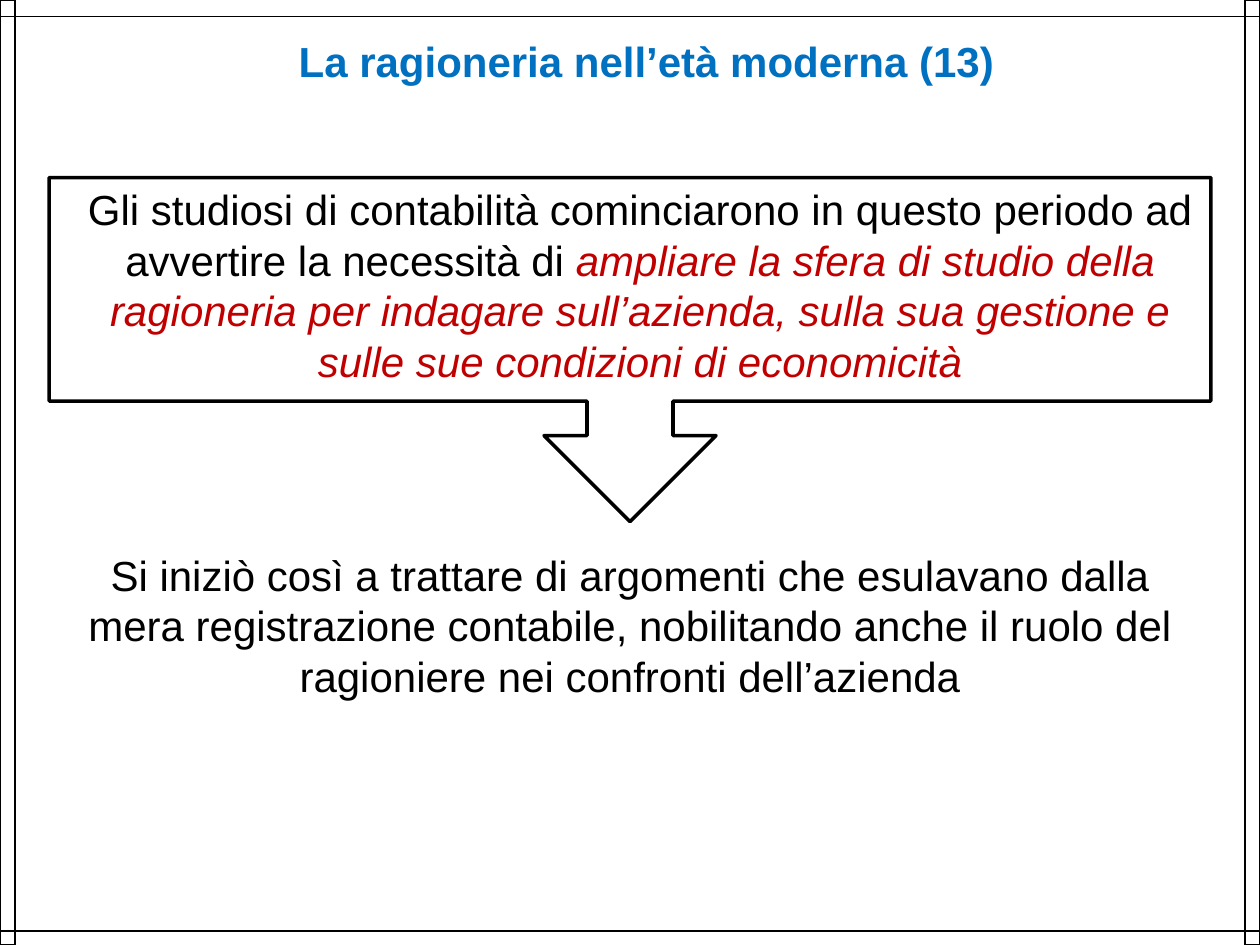
from pptx import Presentation
from pptx.dml.color import RGBColor
from pptx.enum.shapes import MSO_CONNECTOR as Link, MSO_SHAPE as Kind
from pptx.enum.text import MSO_ANCHOR as Anchor, PP_ALIGN as Align
from pptx.util import Inches, Pt
from lxml.etree import SubElement
from pptx.oxml.ns import qn

WIDE, HIGH = 10, 7.5
BAR = 0.12
BLACK, BLUE, RED = "000000", "0070C0", "C00000"

TITLE = "La ragioneria nell’età moderna (13)"
CAUSE = [
    ("Gli studiosi di contabilità cominciarono in questo periodo ad "
     "avvertire la necessità di ", {}),
    ("ampliare la sfera di studio della ragioneria per indagare "
     "sull’azienda, sulla sua gestione e sulle sue condizioni di "
     "economicità", {"color": RED, "italic": True}),
]
RESULT = [
    ("Si iniziò così a trattare di argomenti che esulavano dalla mera "
     "registrazione contabile, nobilitando anche il ruolo del ragioniere "
     "nei confronti dell’azienda", {}),
]
TEXTS = [(CAUSE, (0.55, 1.41, 9.06, 1.72)), (RESULT, (0.47, 4.31, 9.06, 1.31))]


def paint(code):
    return RGBColor.from_string(code)


def put(para, text, color=BLACK, size=24, bold=False, italic=False):
    run = para.add_run()
    run.text = text
    font = run.font
    font.name, font.size = "Arial", Pt(size)
    font.bold, font.italic = bold, italic
    font.color.rgb = paint(color)


def stroke(shape, width):
    shape.line.color.rgb = paint(BLACK)
    shape.line.width = Pt(width)


def outline(kind, box, width):
    shape = slide.shapes.add_shape(kind, *map(Inches, box))
    shape.shadow.inherit = False
    shape.fill.background()
    stroke(shape, width)


def rule(y):
    line = slide.shapes.add_connector(Link.STRAIGHT, *map(Inches, (0, y, WIDE, y)))
    stroke(line, 0.75)
    SubElement(line._element.spPr, qn("a:effectLst"))


deck = Presentation()
deck.slide_width, deck.slide_height = Inches(WIDE), Inches(HIGH)
slide = deck.slides.add_slide(deck.slide_layouts[5])

for x in (0, WIDE - BAR):
    outline(Kind.RECTANGLE, (x, 0, BAR, HIGH), 0.75)
for y in (0.13, 7.39):
    rule(y)

title = slide.shapes.title
title.left, title.top, title.width, title.height = map(Inches, (2.27, 0.23, 5.77, 0.51))
frame = title.text_frame
frame.word_wrap = False
frame.vertical_anchor = Anchor.TOP
frame.paragraphs[0].alignment = Align.LEFT
put(frame.paragraphs[0], TITLE, color=BLUE, bold=True)

for runs, box in TEXTS:
    frame = slide.shapes.add_textbox(*map(Inches, box)).text_frame
    frame.word_wrap = True
    para = frame.paragraphs[0]
    para.alignment = Align.CENTER
    for text, style in runs:
        put(para, text, **style)

outline(Kind.DOWN_ARROW_CALLOUT, (0.39, 1.41, 9.22, 2.73), 2)

deck.save("out.pptx")
